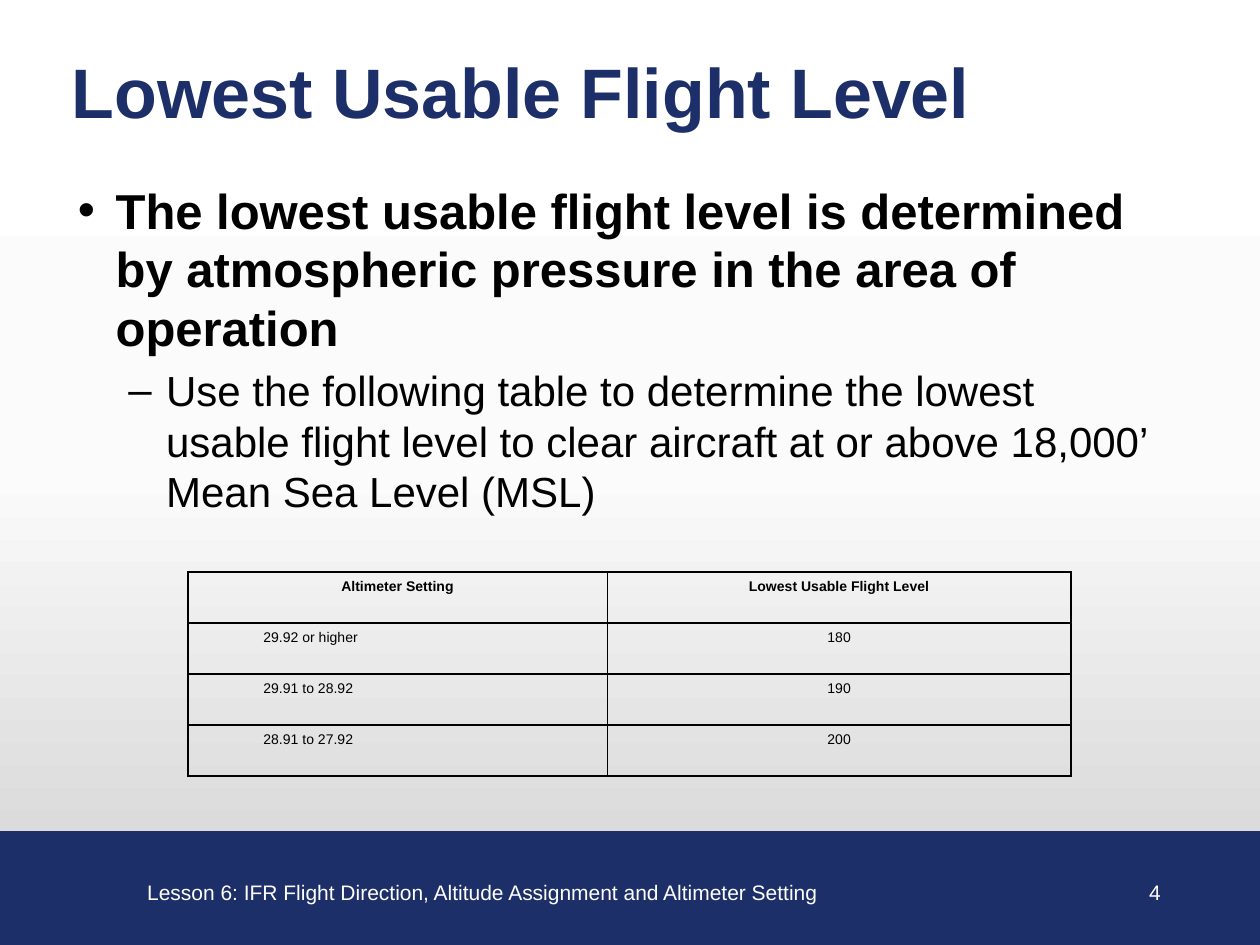
from lxml.etree import SubElement
from pptx import Presentation
from pptx.dml.color import RGBColor
from pptx.enum.shapes import MSO_SHAPE as Shape
from pptx.enum.text import MSO_ANCHOR as Anchor, MSO_AUTO_SIZE as AutoSize, PP_ALIGN as Align
from pptx.oxml.ns import qn
from pptx.util import Inches, Pt

COLORS = {"navy": "1D2F68", "black": "000000", "white": "FFFFFF",
          "mist": "FBFBFB", "gray": "D0D0D0"}
TITLE_ONLY = 5


def rgb(name):
    return RGBColor.from_string(COLORS[name])


class SlideBuilder:
    """Holds the shared style and the slide being built."""

    font_name = "Arial"
    border_width = Pt(1)

    def __init__(self, slide):
        self.slide = slide

    def box(self, left, top, width, height):
        return [Inches(value) for value in (left, top, width, height)]

    def add_text(self, paragraph, text, color="black", align=Align.LEFT, **font_values):
        run = paragraph.add_run()
        run.text = text
        paragraph.alignment = align
        for key, value in {"name": self.font_name, **font_values}.items():
            setattr(run.font, key, value)
        run.font.color.rgb = rgb(color)

    def indent(self, paragraph, margin, first=0, bullet=None):
        properties = paragraph._p.get_or_add_pPr()
        properties.set("marL", str(Inches(margin)))
        properties.set("indent", str(Inches(first)))
        if bullet:
            SubElement(properties, qn("a:buFont"), typeface=self.font_name)
            SubElement(properties, qn("a:buChar"), char=bullet)

    def background(self, stops):
        fill = self.slide.background.fill
        fill.gradient()
        fill.gradient_angle = 270
        stop_list = fill._fill._gradFill.find(qn("a:gsLst"))
        for old_stop in list(stop_list):
            stop_list.remove(old_stop)
        for percent, color in stops:
            stop = SubElement(stop_list, qn("a:gs"), pos=str(percent * 1000))
            SubElement(stop, qn("a:srgbClr"), val=COLORS[color])

    def band(self, *place, color):
        band = self.slide.shapes.add_shape(Shape.RECTANGLE, *self.box(*place))
        band.shadow.inherit = False
        band.fill.solid()
        band.fill.fore_color.rgb = rgb(color)
        band.line.color.rgb = rgb(color)
        band.line.width = Pt(0.75)

    def title(self, text, *place):
        title = self.slide.shapes.title
        title.left, title.top, title.width, title.height = self.box(*place)
        frame_format = {"vertical_anchor": Anchor.MIDDLE, "word_wrap": True,
                        "auto_size": AutoSize.NONE}
        for key, value in frame_format.items():
            setattr(title.text_frame, key, value)
        self.add_text(title.text_frame.paragraphs[0], text, "navy", size=Pt(40), bold=True)

    def label(self, text, *place, wrap=True, anchor=Anchor.TOP, align=Align.LEFT):
        frame = self.slide.shapes.add_textbox(*self.box(*place)).text_frame
        frame.word_wrap = wrap
        frame.vertical_anchor = anchor
        self.add_text(frame.paragraphs[0], text, "white", align, size=Pt(12))

    def bullets(self, items, *place):
        frame = self.slide.shapes.add_textbox(*self.box(*place)).text_frame
        frame.word_wrap = True
        for number, (text, level, mark, margin, size, bold) in enumerate(items):
            paragraph = frame.add_paragraph() if number else frame.paragraphs[0]
            paragraph.level = level
            self.indent(paragraph, margin, -0.3, mark)
            if number:
                paragraph.space_before = Pt(size * 0.2)
            self.add_text(paragraph, text, size=Pt(size), bold=bold)

    def border(self, cell):
        properties = cell._tc.get_or_add_tcPr()
        for position, side in enumerate(("a:lnL", "a:lnR", "a:lnT", "a:lnB")):
            line = properties.makeelement(qn(side), {"w": str(self.border_width)})
            SubElement(SubElement(line, qn("a:solidFill")), qn("a:srgbClr"),
                       val=COLORS["black"])
            properties.insert(position, line)

    def table(self, rows, column_widths, *place):
        table = self.slide.shapes.add_table(
            len(rows), len(column_widths), *self.box(*place)).table
        table.first_row = table.horz_banding = False
        for column, width in zip(table.columns, column_widths):
            column.width = Inches(width)
        for row_number, row in enumerate(rows):
            for column_number, text in enumerate(row):
                cell = table.cell(row_number, column_number)
                cell.fill.background()
                self.border(cell)
                paragraph = cell.text_frame.paragraphs[0]
                is_header = row_number == 0
                is_setting = column_number == 0 and not is_header
                if is_setting:
                    self.indent(paragraph, 0.5)
                self.add_text(paragraph, text, size=Pt(8), bold=is_header,
                              align=Align.LEFT if is_setting else Align.CENTER)


def main():
    deck = Presentation()
    deck.slide_width, deck.slide_height = Inches(10), Inches(7.5)
    page = SlideBuilder(deck.slides.add_slide(deck.slide_layouts[TITLE_ONLY]))

    # Background and footer
    page.background([(0, "white"), (50, "mist"), (100, "gray")])
    page.band(-0.02, 6.6, 10.02, 0.9, color="navy")
    page.label("Lesson 6: IFR Flight Direction, Altitude Assignment and Altimeter Setting",
               1.07, 6.93, 5.57, 0.3, wrap=False)
    page.label("4", 8.69, 6.93, 0.62, 0.3, anchor=Anchor.MIDDLE, align=Align.RIGHT)

    # Title and main points
    page.title("Lowest Usable Flight Level", 0.47, 0.38, 9.27, 0.67)
    page.bullets([
        ("The lowest usable flight level is determined by atmospheric pressure "
         "in the area of operation", 0, "•", 0.35, 28, True),
        ("Use the following table to determine the lowest usable flight level to clear "
         "aircraft at or above 18,000’ Mean Sea Level (MSL)", 1, "–", 0.75, 24, False),
    ], 0.47, 1.38, 8.8, 4.8)

    # Altimeter settings and flight levels
    page.table([
        ("Altimeter Setting", "Lowest Usable Flight Level"),
        ("29.92 or higher", "180"),
        ("29.91 to 28.92", "190"),
        ("28.91 to 27.92", "200"),
    ], (3.33, 3.68), 1.49, 4.54, 7.01, 1.62)

    deck.save("out.pptx")


if __name__ == "__main__":
    main()
